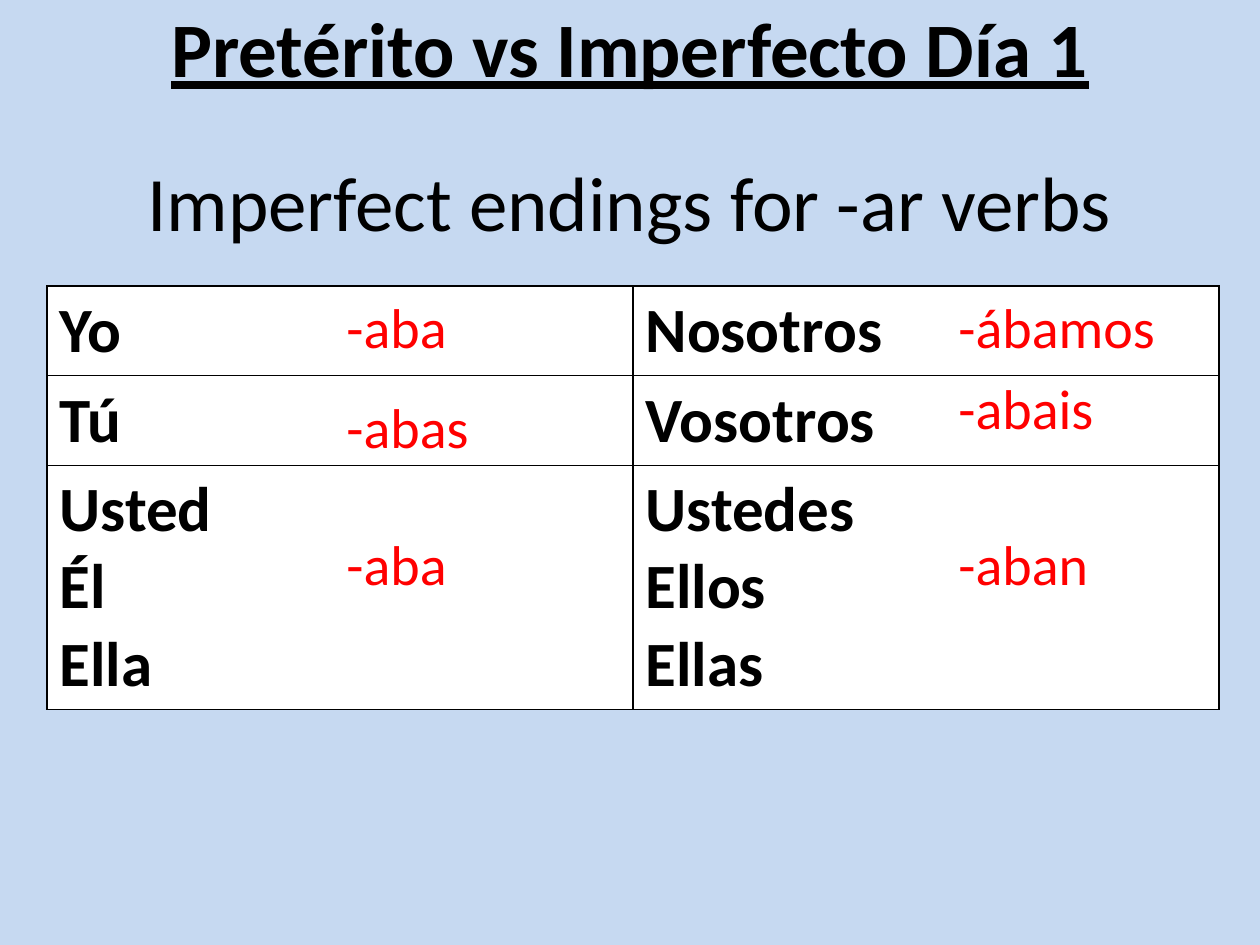
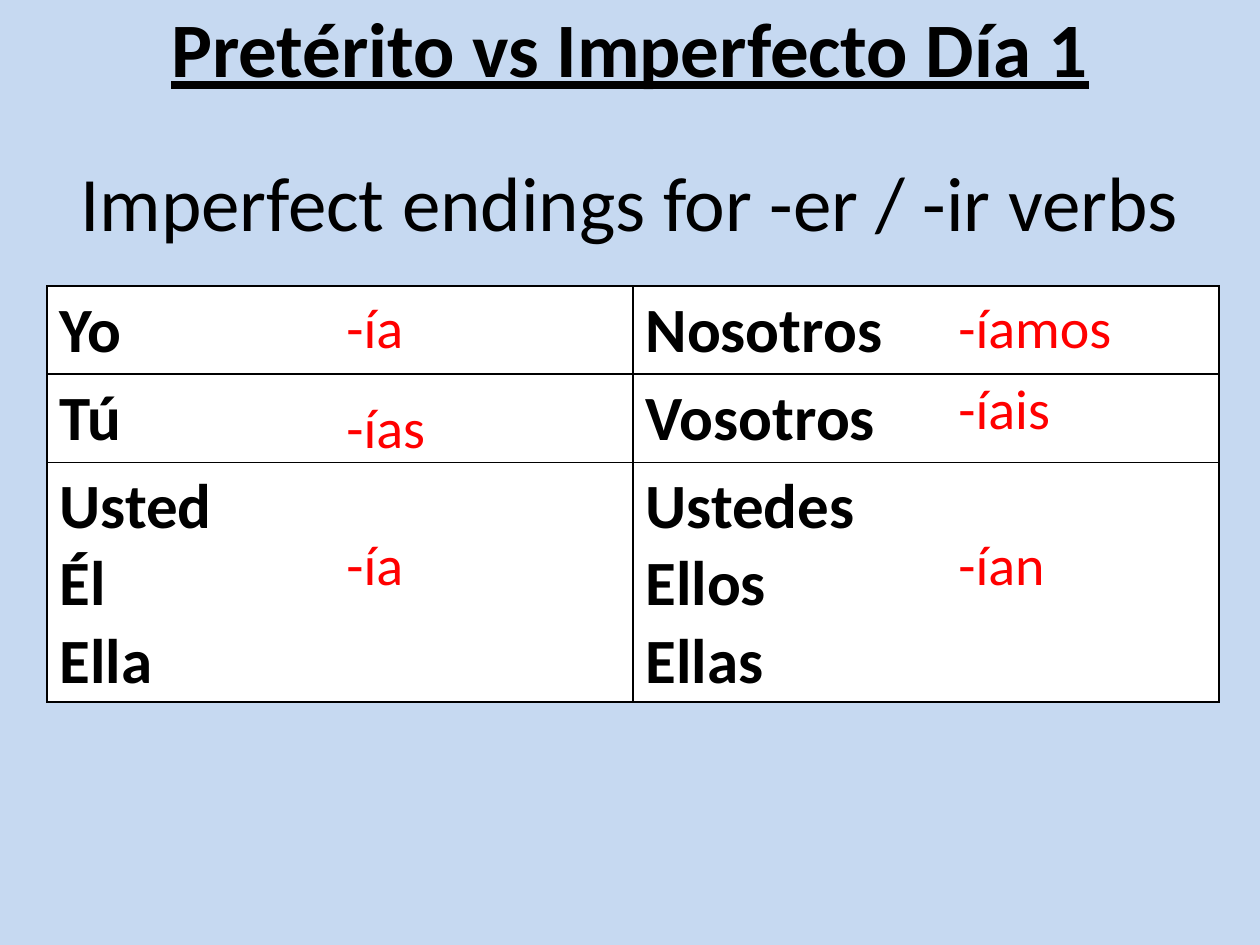
from lxml import etree
from pptx import Presentation
from pptx.dml.color import RGBColor
from pptx.enum.text import MSO_ANCHOR, MSO_AUTO_SIZE, PP_ALIGN
from pptx.oxml.ns import qn
from pptx.util import Emu, Pt

LEFT, CENTER = PP_ALIGN.LEFT, PP_ALIGN.CENTER
TOP, MIDDLE = MSO_ANCHOR.TOP, MSO_ANCHOR.MIDDLE
FIXED, GROW = MSO_AUTO_SIZE.NONE, MSO_AUTO_SIZE.SHAPE_TO_FIT_TEXT
BACKGROUND = RGBColor(0xC6, 0xD9, 0xF1)
BLACK = RGBColor(0, 0, 0)
WHITE = RGBColor(0xFF, 0xFF, 0xFF)
RED = RGBColor(0xFF, 0, 0)

PX_PER_INCH = 126
SLIDE_WIDTH, SLIDE_HEIGHT = 1260, 945
HEADING_HEIGHT = 171
TITLE_TOP, SUBTITLE_TOP = -39, 115
TABLE_LEFT, TABLE_TOP = 47, 286
COLUMN_WIDTH = 586
ROW_HEIGHTS = (88, 88, 239)
ENDING_HEIGHT = 81

TITLE_FONT = {"size": Pt(44), "color": BLACK, "bold": True, "underline": True}
SUBTITLE_FONT = {"size": Pt(44), "color": BLACK}
PRONOUN_FONT = {"size": Pt(36), "color": BLACK, "bold": True}
ENDING_FONT = {"size": Pt(32), "color": RED}

TITLE = "Pretérito vs Imperfecto Día 1"
PRONOUNS = (
    ("Yo", "Nosotros"),
    ("Tú", "Vosotros"),
    ("Usted\nÉl\nElla", "Ustedes\nEllos\nEllas"),
)
ENDING_SPOTS = (
    (334, 286, 155), (334, 386, 155), (334, 523, 155),
    (946, 286, 273), (946, 367, 273), (946, 523, 244),
)
VERB_GROUPS = {
    "Imperfect endings for -ar verbs":
        ("-aba", "-abas", "-aba", "-ábamos", "-abais", "-aban"),
    "Imperfect endings for -er / -ir verbs":
        ("-ía", "-ías", "-ía", "-íamos", "-íais", "-ían"),
}


def px(length):
    return Emu(round(length * 914400 / PX_PER_INCH))


class Deck:
    font_name = "Calibri"

    def __init__(self):
        self.presentation = Presentation()
        self.presentation.slide_width = px(SLIDE_WIDTH)
        self.presentation.slide_height = px(SLIDE_HEIGHT)
        self.slide = None

    def new_slide(self):
        blank = self.presentation.slide_layouts[6]
        self.slide = self.presentation.slides.add_slide(blank)
        backdrop = self.slide.background.fill
        backdrop.solid()
        backdrop.fore_color.rgb = BACKGROUND

    def fill_frame(self, frame, words, style, align=LEFT):
        frame.text = words
        for paragraph in frame.paragraphs:
            paragraph.alignment = align
            font = paragraph.runs[0].font
            font.name = self.font_name
            for attribute, value in style.items():
                if attribute == "color":
                    font.color.rgb = value
                else:
                    setattr(font, attribute, value)

    def text(self, words, box, style, align=LEFT, anchor=TOP, fit=FIXED):
        frame = self.slide.shapes.add_textbox(*map(px, box)).text_frame
        layout = {"word_wrap": True, "vertical_anchor": anchor, "auto_size": fit}
        for attribute, value in layout.items():
            setattr(frame, attribute, value)
        self.fill_frame(frame, words, style, align)

    def heading(self, words, top, style):
        box = (0, top, SLIDE_WIDTH, HEADING_HEIGHT)
        self.text(words, box, style, CENTER, MIDDLE)

    def ending(self, words, spot):
        self.text(words, (*spot, ENDING_HEIGHT), ENDING_FONT, fit=GROW)

    def border(self, cell):
        properties = cell._tc.get_or_add_tcPr()
        for side in ("lnL", "lnR", "lnT", "lnB"):
            line = etree.SubElement(properties, qn(f"a:{side}"), w=str(Pt(1)))
            paint = etree.SubElement(line, qn("a:solidFill"))
            etree.SubElement(paint, qn("a:srgbClr"), val=str(BLACK))

    def table(self, rows):
        columns = len(rows[0])
        box = (TABLE_LEFT, TABLE_TOP, COLUMN_WIDTH * columns, sum(ROW_HEIGHTS))
        grid = self.slide.shapes.add_table(len(rows), columns, *map(px, box)).table
        grid.first_row = grid.horz_banding = False
        for column in grid.columns:
            column.width = px(COLUMN_WIDTH)
        for row, height, entries in zip(grid.rows, ROW_HEIGHTS, rows):
            row.height = px(height)
            for cell, words in zip(row.cells, entries):
                self.border(cell)
                cell.fill.solid()
                cell.fill.fore_color.rgb = WHITE
                self.fill_frame(cell.text_frame, words, PRONOUN_FONT)


def main():
    deck = Deck()
    for subtitle, endings in VERB_GROUPS.items():
        deck.new_slide()
        deck.heading(TITLE, TITLE_TOP, TITLE_FONT)
        deck.table(PRONOUNS)
        deck.heading(subtitle, SUBTITLE_TOP, SUBTITLE_FONT)
        for ending, spot in zip(endings, ENDING_SPOTS):
            deck.ending(ending, spot)
    deck.presentation.save("out.pptx")


if __name__ == "__main__":
    main()
